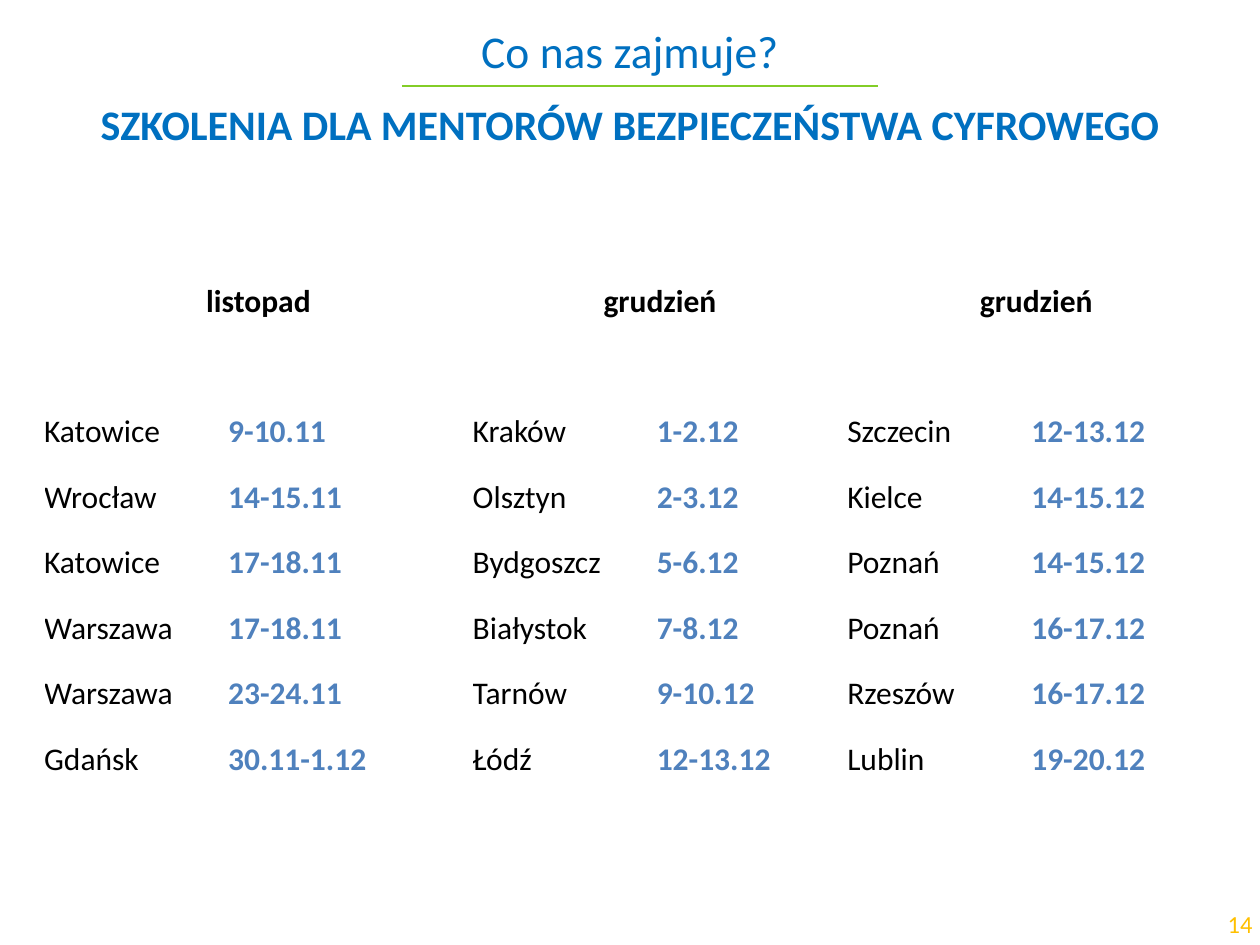
from dataclasses import dataclass

from lxml import etree
from pptx import Presentation
from pptx import util as u
from pptx.dml.color import RGBColor
from pptx.enum import shapes, text
from pptx.oxml.ns import qn

COLORS = {
    "heading": "0070C0",
    "rule": "83CD27",
    "city": "000000",
    "date": "4F81BD",
    "number": "FFC000",
}
FONT = "Calibri"
CITY_WIDTH = 3.71
HEADER_HEIGHT, ROW_HEIGHT = 3.94, 1.32


@dataclass
class Training:
    city: str
    date: str


@dataclass
class Month:
    name: str
    date_width: float
    trainings: list[Training]


MONTHS = [
    Month("listopad", 4.93, [
        Training("Katowice", "9-10.11"),
        Training("Wrocław", "14-15.11"),
        Training("Katowice", "17-18.11"),
        Training("Warszawa", "17-18.11"),
        Training("Warszawa", "23-24.11"),
        Training("Gdańsk", "30.11-1.12"),
    ]),
    Month("grudzień", 3.84, [
        Training("Kraków", "1-2.12"),
        Training("Olsztyn", "2-3.12"),
        Training("Bydgoszcz", "5-6.12"),
        Training("Białystok", "7-8.12"),
        Training("Tarnów", "9-10.12"),
        Training("Łódź", "12-13.12"),
    ]),
    Month("grudzień", 3.91, [
        Training("Szczecin", "12-13.12"),
        Training("Kielce", "14-15.12"),
        Training("Poznań", "14-15.12"),
        Training("Poznań", "16-17.12"),
        Training("Rzeszów", "16-17.12"),
        Training("Lublin", "19-20.12"),
    ]),
]


def add_span(para, words: str, size: float, color: str, bold: bool = False) -> None:
    span = para.add_run()
    span.text = words
    span.font.name = FONT
    span.font.size = u.Pt(size)
    span.font.bold = bold
    span.font.color.rgb = RGBColor.from_string(COLORS[color])


def add_heading(page) -> None:
    box = page.shapes.title
    box.left, box.top, box.width, box.height = u.Cm(0), u.Cm(0.33), u.Cm(25.4), u.Cm(2.82)
    frame = box.text_frame
    frame.word_wrap = True
    frame.auto_size = text.MSO_AUTO_SIZE.NONE
    frame.vertical_anchor = text.MSO_ANCHOR.TOP
    para = frame.paragraphs[0]
    para.alignment = text.PP_ALIGN.CENTER
    add_span(para, "Co nas zajmuje?", 26, "heading")
    para = frame.add_paragraph()
    para.alignment = text.PP_ALIGN.CENTER
    para.space_before = u.Pt(12)
    add_span(para, "SZKOLENIA DLA MENTORÓW BEZPIECZEŃSTWA CYFROWEGO", 24, "heading", True)


def add_page_number(page) -> None:
    box = page.shapes.add_textbox(u.Cm(19.58), u.Cm(18.11), u.Cm(5.92), u.Cm(1.02))
    frame = box.text_frame
    frame.word_wrap = True
    frame.vertical_anchor = text.MSO_ANCHOR.MIDDLE
    para = frame.paragraphs[0]
    para.alignment = text.PP_ALIGN.RIGHT
    add_span(para, "14", 14, "number")


def add_rule(page) -> None:
    rule = page.shapes.add_connector(
        shapes.MSO_CONNECTOR.STRAIGHT, u.Cm(8.1), u.Cm(1.73), u.Cm(17.7), u.Cm(1.73))
    rule.line.color.rgb = RGBColor.from_string(COLORS["rule"])
    rule.line.width = u.Pt(1.5)
    etree.SubElement(rule._element.spPr, qn("a:effectLst"))


def fill_cell(cell, words: str, color: str, bold: bool, centred: bool = False) -> None:
    cell.vertical_anchor = text.MSO_ANCHOR.MIDDLE
    para = cell.text_frame.paragraphs[0]
    para.alignment = text.PP_ALIGN.CENTER if centred else text.PP_ALIGN.LEFT
    add_span(para, words, 18, color, bold)


def add_schedule(page, months: list[Month]) -> None:
    count = len(months[0].trainings)
    width = sum(CITY_WIDTH + month.date_width for month in months)
    height = HEADER_HEIGHT + count * ROW_HEIGHT
    table = page.shapes.add_table(
        count + 1, 2 * len(months), u.Cm(0.89), u.Cm(4.11), u.Cm(width), u.Cm(height)).table
    table.first_row = table.horz_banding = False
    for index, row in enumerate(table.rows):
        row.height = u.Cm(ROW_HEIGHT if index else HEADER_HEIGHT)
    for cell in table.iter_cells():
        cell.fill.background()
        cell.margin_left = cell.margin_right = cell.margin_top = cell.margin_bottom = 0
    for index, month in enumerate(months):
        left = 2 * index
        table.columns[left].width = u.Cm(CITY_WIDTH)
        table.columns[left + 1].width = u.Cm(month.date_width)
        header = table.cell(0, left)
        header.merge(table.cell(0, left + 1))
        fill_cell(header, month.name, "city", True, centred=True)
        for row, training in enumerate(month.trainings, 1):
            fill_cell(table.cell(row, left), training.city, "city", False)
            fill_cell(table.cell(row, left + 1), training.date, "date", True)


def main() -> None:
    deck = Presentation()
    deck.slide_width, deck.slide_height = u.Cm(25.4), u.Cm(19.05)
    page = deck.slides.add_slide(deck.slide_layouts.get_by_name("Title Only"))
    add_heading(page)
    add_page_number(page)
    add_rule(page)
    add_schedule(page, MONTHS)
    deck.save("out.pptx")


if __name__ == "__main__":
    main()
